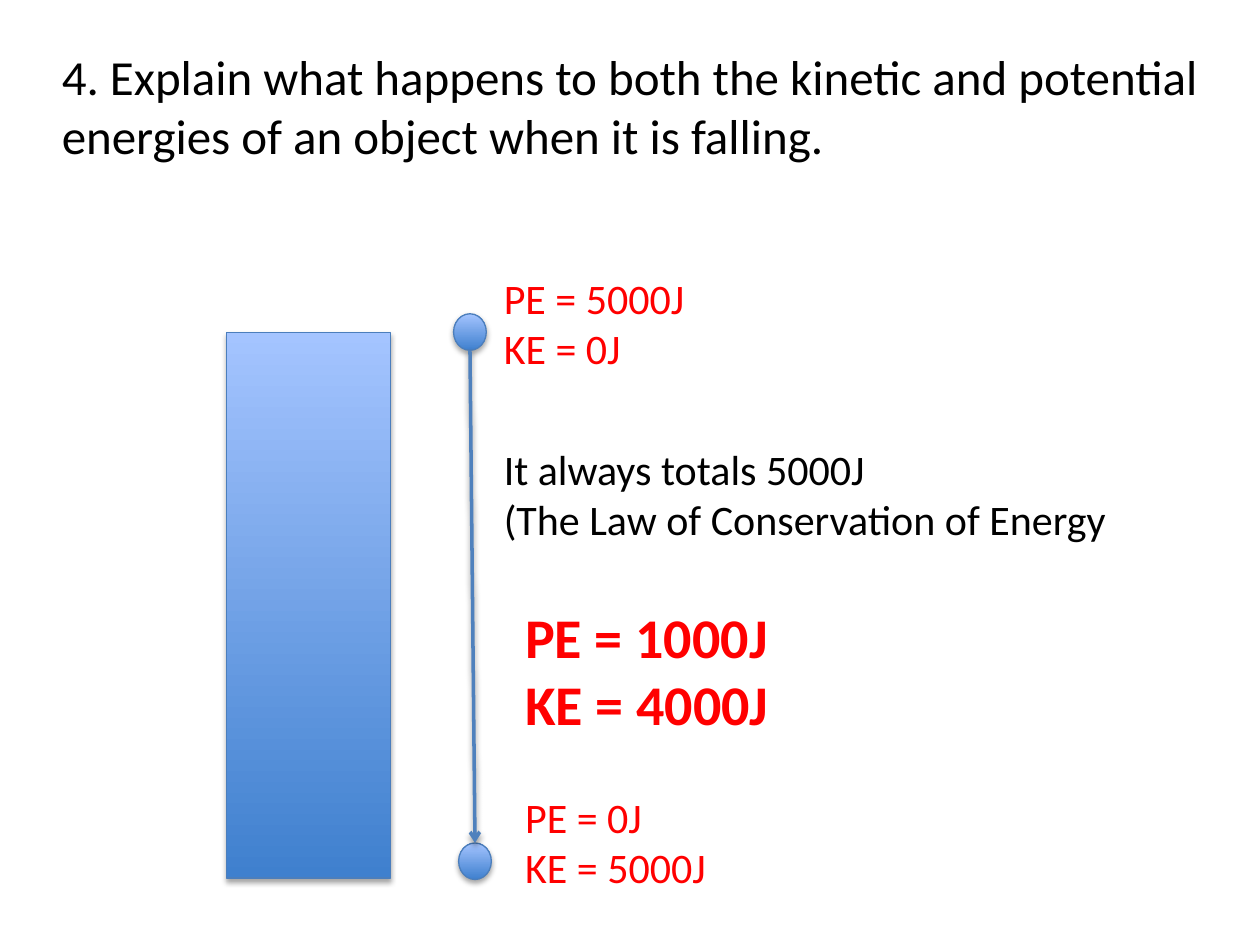
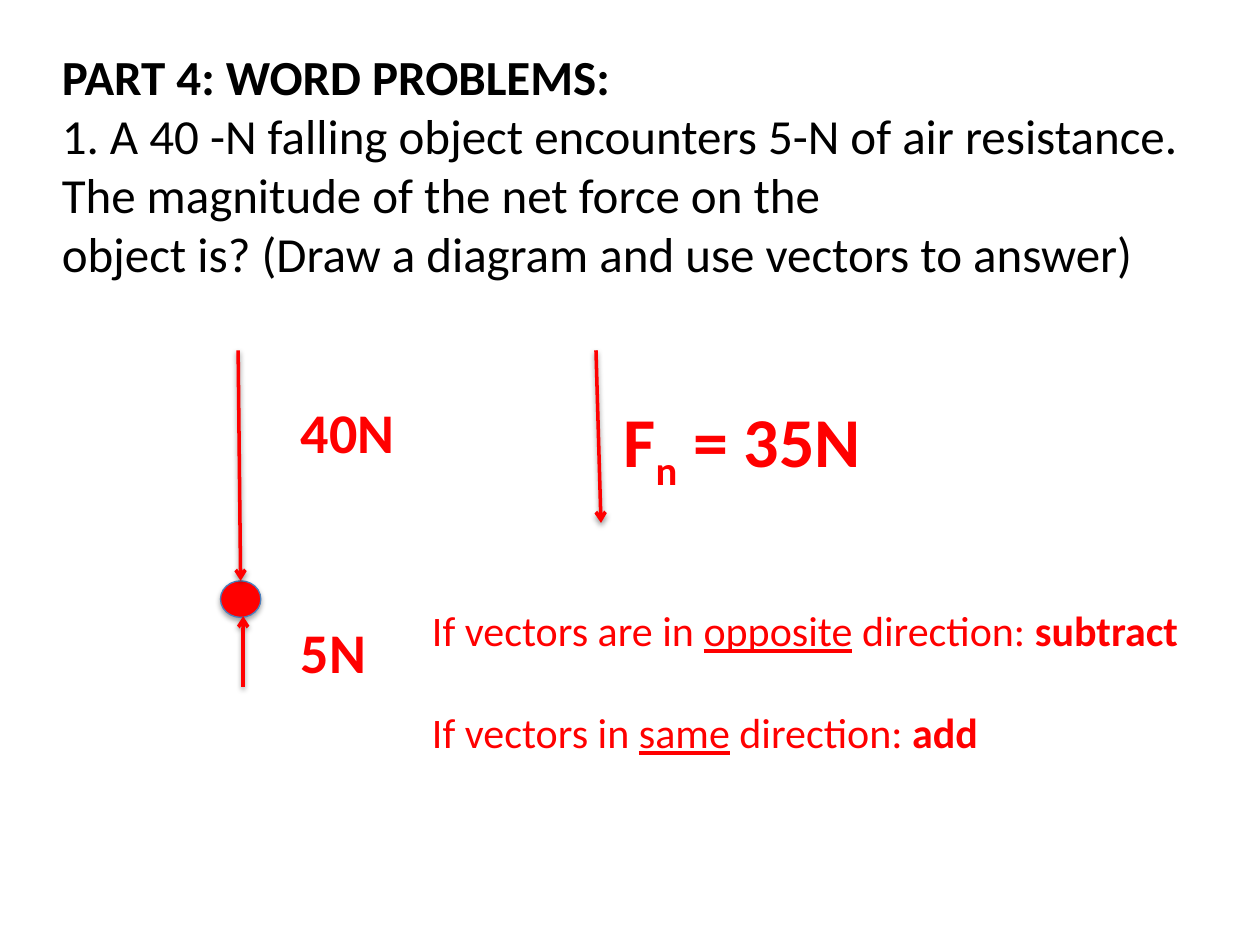
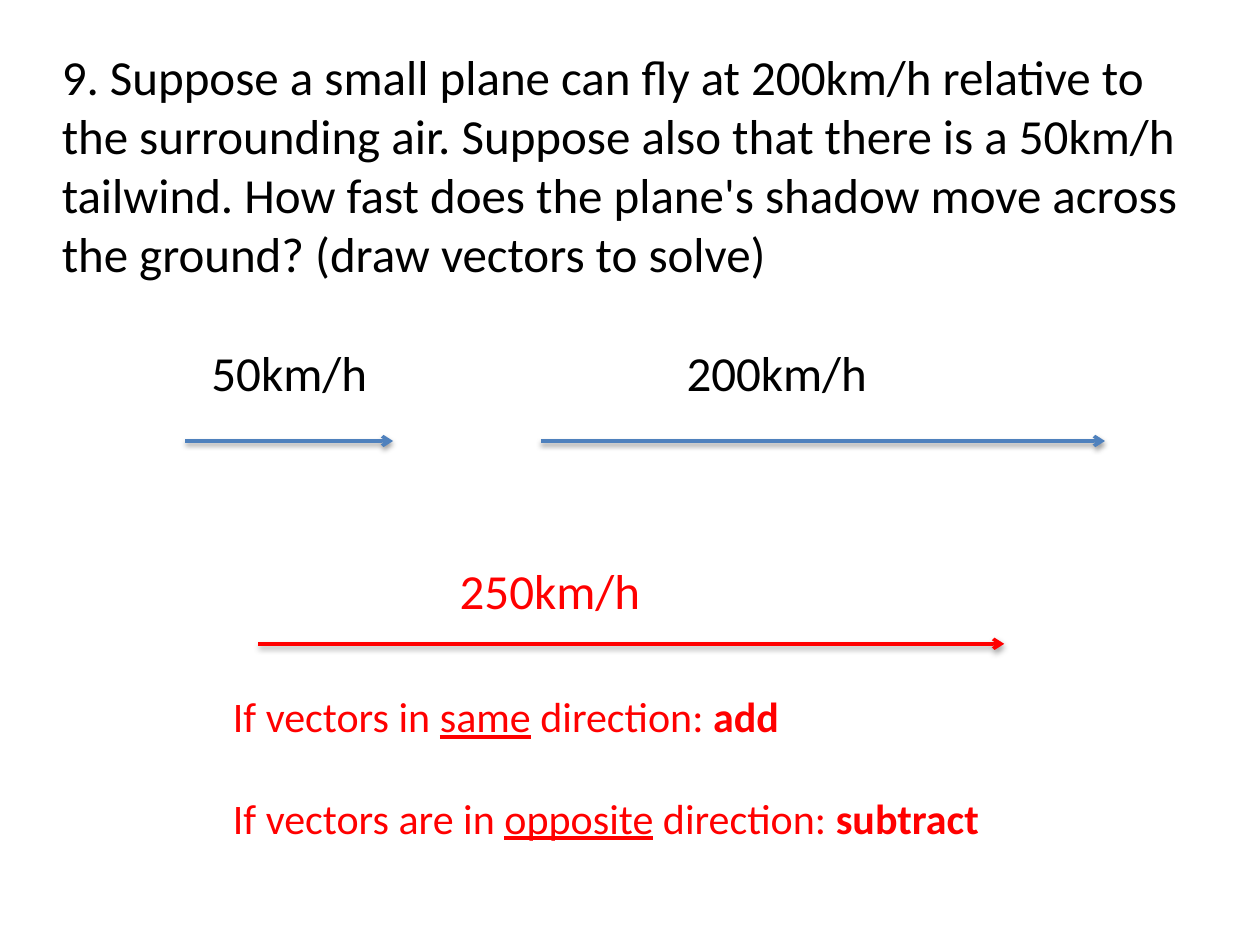
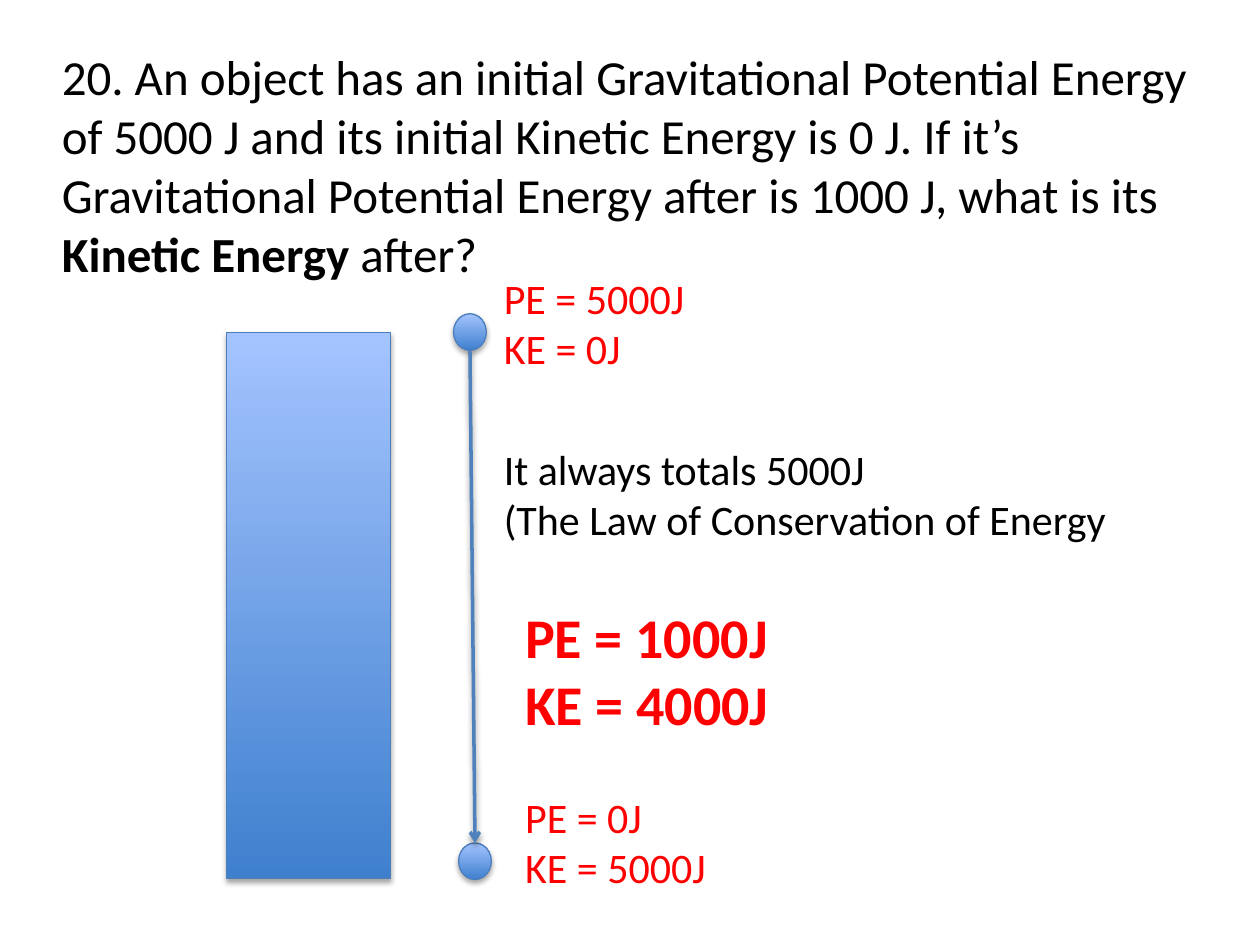
from dataclasses import dataclass

from lxml import etree
from pptx import Presentation
from pptx.dml.color import RGBColor
from pptx.enum.shapes import MSO_CONNECTOR, MSO_SHAPE
from pptx.enum.text import MSO_ANCHOR, MSO_AUTO_SIZE, PP_ALIGN
from pptx.oxml.ns import qn
from pptx.util import Inches, Pt

STRAIGHT = MSO_CONNECTOR.STRAIGHT
RECTANGLE = MSO_SHAPE.RECTANGLE
OVAL = MSO_SHAPE.OVAL
TOP = MSO_ANCHOR.TOP
LEFT = PP_ALIGN.LEFT
GROW = MSO_AUTO_SIZE.SHAPE_TO_FIT_TEXT

SLIDE_WIDTH, SLIDE_HEIGHT = Inches(10), Inches(7.5)
COLUMNS, ROWS = 100, 75
COLUMN, ROW = SLIDE_WIDTH / COLUMNS, SLIDE_HEIGHT / ROWS
TITLE_ONLY = 5
FONT = "Calibri"
COLORS = {
    "ink": "000000",
    "answer": "FF0000",
    "vector": "4F81BD",
    "outline": "4B7EBC",
    "deep": "3F80CE",
    "pale": "A4C4FF",
}
BOLD = {"bold": True}
UNDERLINED = {"underline": True}
QUESTION = {"size": Pt(28), "color": "ink"}
NOTE = {"size": Pt(24), "color": "ink"}
ANSWER = {"size": Pt(24), "color": "answer"}
BIG_ANSWER = {"size": Pt(32), "color": "answer", "bold": True}
HUGE_ANSWER = {**BIG_ANSWER, "size": Pt(40)}
SPEED_ANSWER = {**QUESTION, "color": "answer"}
BLANK_LINE = Pt(29.3)
SAME = [("If vectors in ", {}), ("same", UNDERLINED), (" direction: ", {}), ("add", BOLD)]
OPPOSITE = [("If vectors are in ", {}), ("opposite", UNDERLINED), (" direction: ", {}), ("subtract", BOLD)]


@dataclass
class Box:
    left: float
    top: float
    width: float
    height: float

    def area(self, left, top, width, height):
        return Box(self.left + left, self.top + top, width, height)

    def point(self, across, down):
        return round((self.left + across) * COLUMN), round((self.top + down) * ROW)

    def frame(self):
        return *self.point(0, 0), round(self.width * COLUMN), round(self.height * ROW)


def rgb(name):
    return RGBColor.from_string(COLORS[name])


def write(text_frame, paragraphs, style, gap=0):
    for name, value in {"word_wrap": True, "auto_size": GROW, "vertical_anchor": TOP}.items():
        setattr(text_frame, name, value)
    for index, spans in enumerate(paragraphs):
        para = text_frame.add_paragraph() if index else text_frame.paragraphs[0]
        para.alignment = LEFT
        if index and gap:
            para.space_before = gap
        for text, changes in [(spans, {})] if isinstance(spans, str) else spans:
            span = para.add_run()
            span.text = text
            span.font.name = FONT
            for name, value in {**style, **changes}.items():
                if name == "color":
                    span.font.color.rgb = rgb(value)
                elif name == "baseline":
                    span.font._element.set(name, value)
                else:
                    setattr(span.font, name, value)


def add_text(page, box, paragraphs, style, gap=0):
    write(page.shapes.add_textbox(*box.frame()).text_frame, paragraphs, style, gap)


def add_question(page, box, paragraphs):
    title = page.shapes.title
    for name, value in zip(("left", "top", "width", "height"), box.frame()):
        setattr(title, name, value)
    write(title.text_frame, paragraphs, QUESTION)


def add_shadow(shape, distance, opacity):
    properties = shape._element.spPr
    effects = properties.find(qn("a:effectLst"))
    if effects is None:
        effects = etree.SubElement(properties, qn("a:effectLst"))
    shadow = etree.SubElement(effects, qn("a:outerShdw"), blurRad=str(Pt(3.1)),
                              dist=str(Pt(distance)), dir="5400000", rotWithShape="0")
    color = etree.SubElement(shadow, qn("a:srgbClr"), val=COLORS["ink"])
    etree.SubElement(color, qn("a:alpha"), val=str(opacity * 1000))


def add_body(page, kind, box, color=None):
    body = page.shapes.add_shape(kind, *box.frame())
    if color:
        body.fill.solid()
        body.fill.fore_color.rgb = rgb(color)
    else:
        body.fill.gradient()
        body.fill.gradient_angle = 90
        for stop, name in zip(body.fill.gradient_stops, ("deep", "pale")):
            stop.color.rgb = rgb(name)
    body.line.color.rgb = rgb("outline")
    body.line.width = Pt(0.75)
    body.shadow.inherit = False
    add_shadow(body, 1.8, 35)
    return body


def add_vector(page, start, end, color, target=None):
    vector = page.shapes.add_connector(STRAIGHT, *start, *end)
    if target is not None:
        vector.end_connect(target, 0)
    vector.line.color.rgb = rgb(color)
    vector.line.width = Pt(2)
    etree.SubElement(vector.line._get_or_add_ln(), qn("a:tailEnd"), type="arrow")
    add_shadow(vector, 1.6, 38)


def add_fall(page, box):
    add_body(page, RECTANGLE, box.area(0, 5.3, 13, 43.3))
    add_body(page, OVAL, box.area(18, 3.8, 2.6, 2.9))
    landed = add_body(page, OVAL, box.area(18.4, 45.8, 2.6, 2.9))
    add_vector(page, box.point(19.3, 6.7), box.point(19.7, 45.8), "vector", landed)
    for left, top, width, height, lines, style in (
        (21, 0, 48, 9.1, ("PE = 5000J", "KE = 0J"), ANSWER),
        (22.7, 41.2, 48, 9.1, ("PE = 0J", "KE = 5000J"), ANSWER),
        (22.7, 26.2, 48, 11.8, ("PE = 1000J", "KE = 4000J"), BIG_ANSWER),
        (21, 13.6, 55.7, 9.1,
         ("It always totals 5000J", "(The Law of Conservation of Energy"), NOTE),
    ):
        add_text(page, box.area(left, top, width, height), lines, style)


def add_forces(page, box):
    ball = add_body(page, OVAL, box.area(0, 18.3, 3.2, 2.9), "answer")
    add_vector(page, box.point(1.4, 0), box.point(1.7, 18.3), "answer", ball)
    add_vector(page, box.point(1.8, 26.7), box.point(1.8, 21.1), "answer")
    for top, force in ((3.3, "40N"), (20.7, "5N")):
        add_text(page, box.area(5.4, top, 20.8, 6.4), [force], BIG_ANSWER)


def add_net_force(page, box):
    add_vector(page, box.point(0, 0), box.point(0.4, 13.7), "answer")
    add_text(page, box.area(1.2, 3.3, 31.7, 7.7),
             [[("F", {}), ("n", {"baseline": "-25000"}), (" = 35N", {})]], HUGE_ANSWER)


def add_speed(page, box, label_left, label, style, color):
    add_text(page, box.area(label_left, 0, 23.9, 5.7), [label], style)
    add_vector(page, box.point(0, box.height), box.point(box.width, box.height), color)


def add_fall_slide(page, question, question_height):
    add_question(page, Box(3.9, 3.2, 92.2, question_height), [question])
    add_fall(page, Box(18, 21.1, 76.7, 50.3))


def add_force_slide(page):
    add_question(page, Box(3.9, 3.2, 92.2, 24.6), [
        [("PART 4: WORD PROBLEMS:", BOLD)],
        "1. A 40 -N falling object encounters 5-N of air resistance. "
        "The magnitude of the net force on the",
        "object is? (Draw a diagram and use vectors to answer)",
    ])
    add_forces(page, Box(17.5, 27.8, 26.2, 27.1))
    add_net_force(page, Box(47.3, 27.8, 32.9, 13.7))
    add_text(page, Box(33.3, 47.5, 65.1, 13.1), [OPPOSITE, SAME], ANSWER, BLANK_LINE)


def add_speed_slide(page):
    add_question(page, Box(3.9, 3.2, 92.2, 24.6), [
        "9. Suppose a small plane can fly at 200km/h relative to the surrounding air. "
        "Suppose also that there is a 50km/h tailwind. How fast does the plane's shadow "
        "move across the ground? (draw vectors to solve)",
    ])
    add_speed(page, Box(42.9, 26.7, 44.8, 8.3), 10.6, "200km/h", QUESTION, "vector")
    add_speed(page, Box(14.7, 26.7, 16.5, 8.3), 1.1, "50km/h", QUESTION, "vector")
    add_speed(page, Box(20.5, 44, 59.2, 7.1), 15, "250km/h", SPEED_ANSWER, "answer")
    add_text(page, Box(17.5, 54.3, 65.1, 21.2), [SAME, OPPOSITE], ANSWER, BLANK_LINE)


def main():
    deck = Presentation()
    deck.slide_width, deck.slide_height = SLIDE_WIDTH, SLIDE_HEIGHT
    layout = deck.slide_layouts[TITLE_ONLY]
    pages = [deck.slides.add_slide(layout) for _ in range(4)]
    add_fall_slide(pages[0], "4. Explain what happens to both the kinetic and potential "
                   "energies of an object when it is falling.", 15.1)
    add_force_slide(pages[1])
    add_speed_slide(pages[2])
    add_fall_slide(pages[3], [
        ("20. An object has an initial Gravitational Potential Energy of 5000 J and its "
         "initial Kinetic Energy is 0 J. If it’s Gravitational Potential Energy after is "
         "1000 J, what is its ", {}),
        ("Kinetic Energy ", BOLD),
        ("after?", {}),
    ], 24.6)
    deck.save("out.pptx")


if __name__ == "__main__":
    main()
